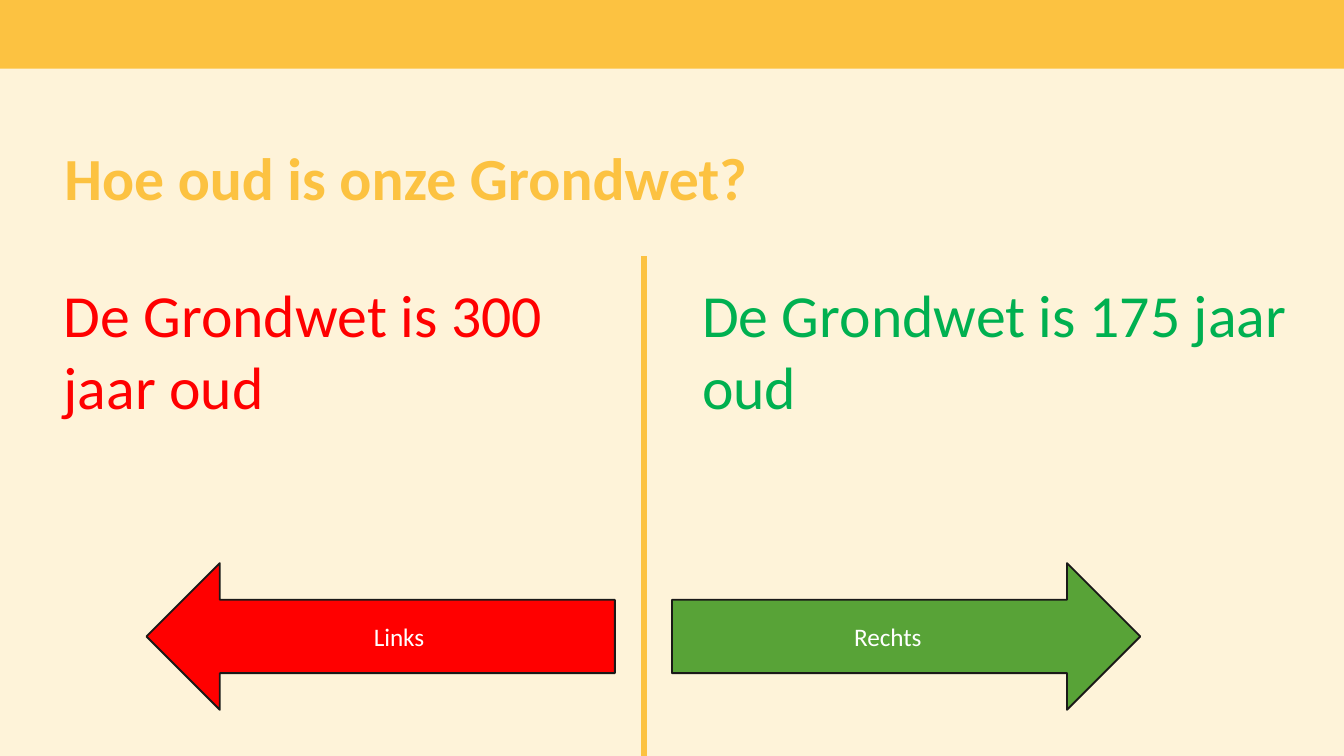
from dataclasses import dataclass
from lxml.etree import SubElement
from pptx import Presentation
from pptx.dml.color import RGBColor
from pptx.enum.shapes import MSO_CONNECTOR, MSO_SHAPE
from pptx.enum.text import MSO_ANCHOR, PP_ALIGN
from pptx.oxml.ns import qn
from pptx.util import Inches, Pt


@dataclass(frozen=True)
class Theme:
    font: str = "Calibri"
    cream: RGBColor = RGBColor.from_string("FEF3D9")
    yellow: RGBColor = RGBColor.from_string("FCC241")
    red: RGBColor = RGBColor.from_string("FF0000")
    green_text: RGBColor = RGBColor.from_string("00B050")
    green_arrow: RGBColor = RGBColor.from_string("58A337")
    white: RGBColor = RGBColor.from_string("FFFFFF")
    outline: RGBColor = RGBColor.from_string("1A1918")
    large: Pt = Pt(32)
    small: Pt = Pt(13.5)


theme = Theme()
deck = Presentation()
deck.slide_width = Inches(10)
deck.slide_height = deck.slide_width * 9 // 16
column, row = deck.slide_width / 100, deck.slide_height / 100
page = deck.slides.add_slide(deck.slide_layouts[6])
page.background.fill.solid()
page.background.fill.fore_color.rgb = theme.cream


def place(left, top, width, height):
    return [int(left * column), int(top * row), int(width * column), int(height * row)]


def write(box, text, size, color, frame={}, paragraph={}, bold=False):
    for name, value in {"word_wrap": True, **frame}.items():
        setattr(box.text_frame, name, value)
    para = box.text_frame.paragraphs[0]
    for name, value in paragraph.items():
        setattr(para, name, value)
    span = para.add_run()
    span.text = text
    for name, value in {"name": theme.font, "size": size, "bold": bold}.items():
        setattr(span.font, name, value)
    span.font.color.rgb = color


band = page.shapes.add_shape(MSO_SHAPE.RECTANGLE, *place(0, 0, 100, 9.1))
band.shadow.inherit = False
band.fill.solid()
band.fill.fore_color.rgb = theme.yellow
band.line.fill.background()

title = page.shapes.add_textbox(*place(4.8, 18.3, 52.7, 17.4))
write(title, "Hoe oud is onze Grondwet?", theme.large, theme.yellow,
      {"margin_left": 0, "margin_right": 0, "margin_bottom": 0},
      {"line_spacing": Pt(36)}, bold=True)

divider = page.shapes.add_connector(
    MSO_CONNECTOR.STRAIGHT, *place(47.9, 33.9, 47.9, 100))
divider.line.color.rgb = theme.yellow
divider.line.width = Pt(3)
SubElement(divider.element.spPr, qn("a:effectLst"))

answers = [
    ("De Grondwet is 300 jaar oud", 3.75, 45, theme.red,
     "Links", MSO_SHAPE.LEFT_ARROW, 10.9, theme.red),
    ("De Grondwet is 175 jaar oud", 51.25, 52.1, theme.green_text,
     "Rechts", MSO_SHAPE.RIGHT_ARROW, 50, theme.green_arrow),
]
for answer, left, width, color, label, kind, arrow_left, fill in answers:
    box = page.shapes.add_textbox(*place(left, 35.9, width, 21))
    write(box, answer, theme.large, color)

    arrow = page.shapes.add_shape(kind, *place(arrow_left, 74.5, 34.85, 19.4))
    arrow.shadow.inherit = False
    arrow.fill.solid()
    arrow.fill.fore_color.rgb = fill
    arrow.line.color.rgb = theme.outline
    arrow.line.width = Pt(1)
    write(arrow, label, theme.small, theme.white,
          {"vertical_anchor": MSO_ANCHOR.MIDDLE}, {"alignment": PP_ALIGN.CENTER})

deck.save("out.pptx")
